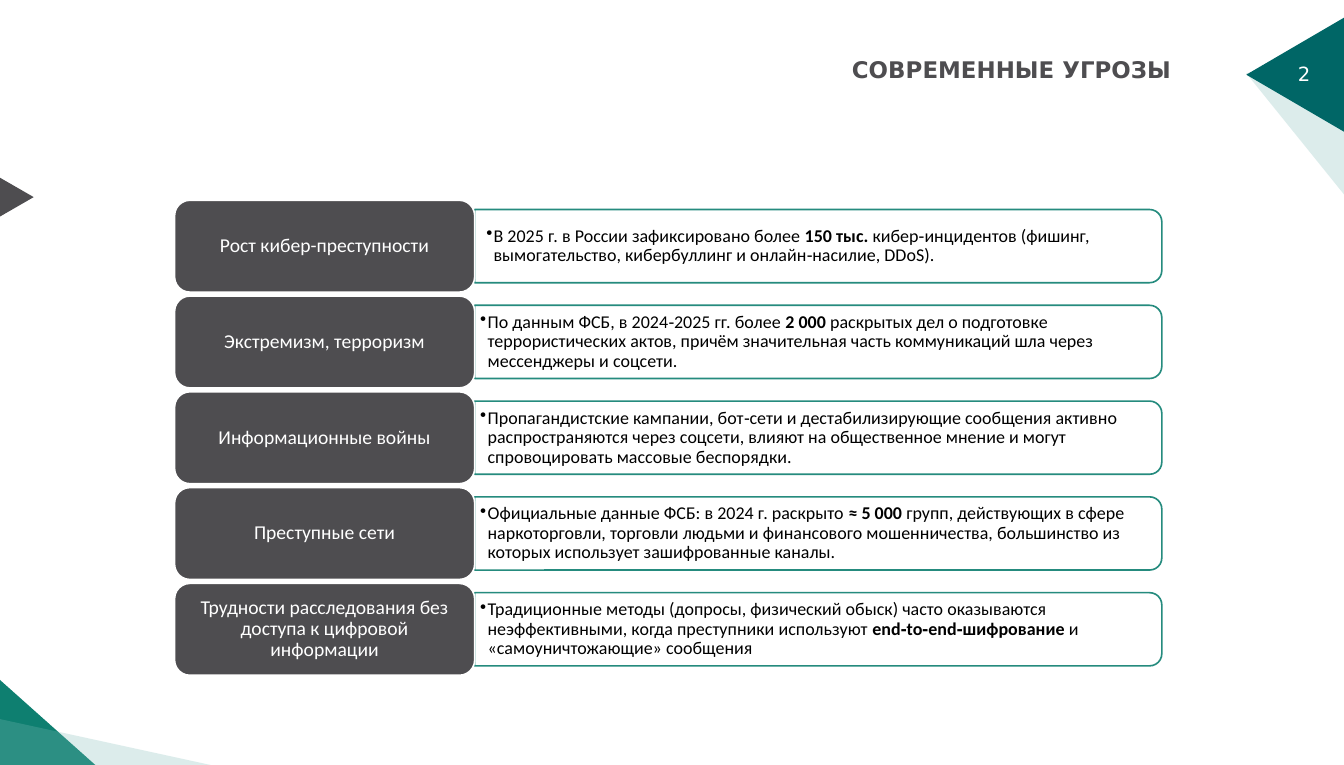
import pptx
import pptx.dml.color
import pptx.enum.shapes
import pptx.enum.text
import pptx.util
from lxml import etree
from pptx.oxml.ns import qn

Pt = pptx.util.Pt
RGBColor = pptx.dml.color.RGBColor
SHAPE = pptx.enum.shapes.MSO_SHAPE
ANCHOR = pptx.enum.text.MSO_ANCHOR
ALIGN = pptx.enum.text.PP_ALIGN

TEAL = RGBColor(0x0E, 0x7F, 0x70)
DEEP_TEAL = RGBColor(0x00, 0x66, 0x66)
PALE_TEAL = RGBColor(0x7F, 0xBC, 0xB7)
GRAY = RGBColor(0x4E, 0x4D, 0x50)
WHITE = RGBColor(0xFF, 0xFF, 0xFF)
BLACK = RGBColor(0x00, 0x00, 0x00)

SLIDE_WIDTH, SLIDE_HEIGHT = 822.24, 468
LABEL_WIDTH, LABEL_HEIGHT = 183.6, 56.2
DETAIL_HEIGHT = 44.8

THREATS = [
    ("Рост кибер-преступности",
     [("В 2025 г. в России зафиксировано более ", False),
      ("150 тыс.", True),
      (" кибер‑инцидентов (фишинг, вымогательство, кибербуллинг и онлайн‑насилие, DDoS).", False)],
     (7.2, 3.6)),
    ("Экстремизм, терроризм",
     [("По данным ФСБ, в 2024‑2025 гг. более ", False),
      ("2 000", True),
      (" раскрытых дел о подготовке террористических актов, причём значительная часть "
       "коммуникаций шла через мессенджеры и соцсети.", False)],
     (3.4, 1.7)),
    ("Информационные войны",
     [("Пропагандистские кампании, бот‑сети и дестабилизирующие сообщения активно "
       "распространяются через соцсети, влияют на общественное мнение и могут "
       "спровоцировать массовые беспорядки.", False)],
     (3.4, 1.7)),
    ("Преступные сети",
     [("Официальные данные ФСБ: в 2024 г. раскрыто ", False),
      ("≈ 5 000", True),
      (" групп, действующих в сфере наркоторговли, торговли людьми и финансового "
       "мошенничества, большинство из которых использует зашифрованные каналы.", False)],
     (3.4, 1.7)),
    ("Трудности расследования без доступа к цифровой информации",
     [("Традиционные методы (допросы, физический обыск) часто оказываются "
       "неэффективными, когда преступники используют ", False),
      ("end‑to‑end‑шифрование", True),
      (" и «самоуничтожающие» сообщения", False)],
     (3.4, 1.7)),
]


def set_opacity(fill_format_parent, percent):
    for color in fill_format_parent.iter(qn("a:srgbClr")):
        etree.SubElement(color, qn("a:alpha")).set("val", str(percent * 1000))


def set_font(paragraph, name, size, color):
    paragraph.font.name = name
    paragraph.font.size = Pt(size)
    paragraph.font.color.rgb = color


def set_margins(frame, horizontal, vertical):
    frame.margin_left = frame.margin_right = Pt(horizontal)
    frame.margin_top = frame.margin_bottom = Pt(vertical)


def add_triangle(slide, box, color, rotation=0, apex=0.5, opacity=100):
    triangle = slide.shapes.add_shape(SHAPE.ISOSCELES_TRIANGLE, *map(Pt, box))
    triangle.shadow.inherit = False
    triangle.adjustments[0] = apex
    triangle.rotation = rotation
    triangle.fill.solid()
    triangle.fill.fore_color.rgb = color
    triangle.line.fill.background()
    if opacity < 100:
        set_opacity(triangle.element.spPr, opacity)


def add_page_corner(slide, left, top):
    add_triangle(slide, (left, top + 31, 123.8, 86.4), PALE_TEAL, 270, 0.865, 27)
    add_triangle(slide, (left + 13.7, top, 69.8, 59.8), DEEP_TEAL, 270)
    number_box = slide.shapes.add_textbox(Pt(left + 43.2), Pt(top + 18.7), Pt(41.8), Pt(26.6))
    number_box.text_frame.word_wrap = True
    number = number_box.text_frame.paragraphs[0]
    number.text = "2"
    set_font(number, "DejaVu Sans", 12, WHITE)


def add_left_decor(slide, bottom):
    add_triangle(slide, (-0.7, bottom - 52.6, 59, 52.6), TEAL, apex=0)
    add_triangle(slide, (-5, 108.7, 27.4, 23.8), GRAY, 90)
    add_triangle(slide, (0, bottom - 28.1, 128.9, 28.1), PALE_TEAL, apex=0, opacity=27)


def add_title(slide, left, top, width, height):
    title = slide.shapes.title
    title.left, title.top, title.width, title.height = map(Pt, (left, top, width, height))
    frame = title.text_frame
    frame.word_wrap = False
    frame.auto_size = pptx.enum.text.MSO_AUTO_SIZE.SHAPE_TO_FIT_TEXT
    frame.vertical_anchor = ANCHOR.TOP
    heading = frame.paragraphs[0]
    heading.text = "СОВРЕМЕННЫЕ УГРОЗЫ"
    heading.alignment = ALIGN.LEFT
    set_font(heading, "DejaVu Sans", 14, GRAY)
    heading.font.bold = True


def add_detail(slide, left, middle, width, runs, margins):
    card = slide.shapes.add_shape(
        SHAPE.ROUND_2_SAME_RECTANGLE,
        Pt(left + (width - DETAIL_HEIGHT) / 2), Pt(middle - width / 2),
        Pt(DETAIL_HEIGHT), Pt(width))
    card.rotation = 90
    card.shadow.inherit = False
    card.fill.background()
    card.line.color.rgb = TEAL
    card.line.width = Pt(1)
    set_opacity(card.element.spPr, 90)

    text_box = slide.shapes.add_textbox(
        Pt(left), Pt(middle - 20.2), Pt(width - 2.2), Pt(40.4))
    frame = text_box.text_frame
    frame.word_wrap = True
    frame.vertical_anchor = ANCHOR.MIDDLE
    set_margins(frame, *margins)
    detail = frame.paragraphs[0]
    detail.level = 1
    properties = detail._p.get_or_add_pPr()
    properties.set("marL", str(Pt(4.5)))
    properties.set("indent", str(Pt(-4.5)))
    etree.SubElement(properties, qn("a:buChar")).set("char", "•")
    detail.line_spacing = 0.9
    set_font(detail, "Calibri", 11, BLACK)
    for text, bold in runs:
        run = detail.add_run()
        run.text = text
        run.font.bold = bold


def add_label(slide, left, middle, text):
    label = slide.shapes.add_shape(
        SHAPE.ROUNDED_RECTANGLE, Pt(left), Pt(middle - LABEL_HEIGHT / 2),
        Pt(LABEL_WIDTH), Pt(LABEL_HEIGHT))
    label.shadow.inherit = False
    label.fill.solid()
    label.fill.fore_color.rgb = GRAY
    label.line.color.rgb = WHITE
    label.line.width = Pt(1)
    frame = label.text_frame
    frame.word_wrap = True
    frame.vertical_anchor = ANCHOR.MIDDLE
    set_margins(frame, 6, 4)
    name = frame.paragraphs[0]
    name.text = text
    name.alignment = ALIGN.CENTER
    name.line_spacing = 0.9
    set_font(name, "Calibri", 12, WHITE)


def add_threats(slide, left, top, width, height):
    pitch = (height - LABEL_HEIGHT) / (len(THREATS) - 1)
    for index, (label, runs, margins) in enumerate(THREATS):
        middle = top + LABEL_HEIGHT / 2 + index * pitch
        add_detail(slide, left + LABEL_WIDTH, middle, width - LABEL_WIDTH, runs, margins)
        add_label(slide, left, middle, label)


def main():
    presentation = pptx.Presentation()
    presentation.slide_width = Pt(SLIDE_WIDTH)
    presentation.slide_height = Pt(SLIDE_HEIGHT)
    slide = presentation.slides.add_slide(presentation.slide_layouts[5])
    add_page_corner(slide, 743.8, 15.8)
    add_left_decor(slide, SLIDE_HEIGHT)
    add_title(slide, 514, 30.2, 211, 24.5)
    add_threats(slide, 106.8, 122.5, 604, 290.6)
    presentation.save("out.pptx")


if __name__ == "__main__":
    main()
